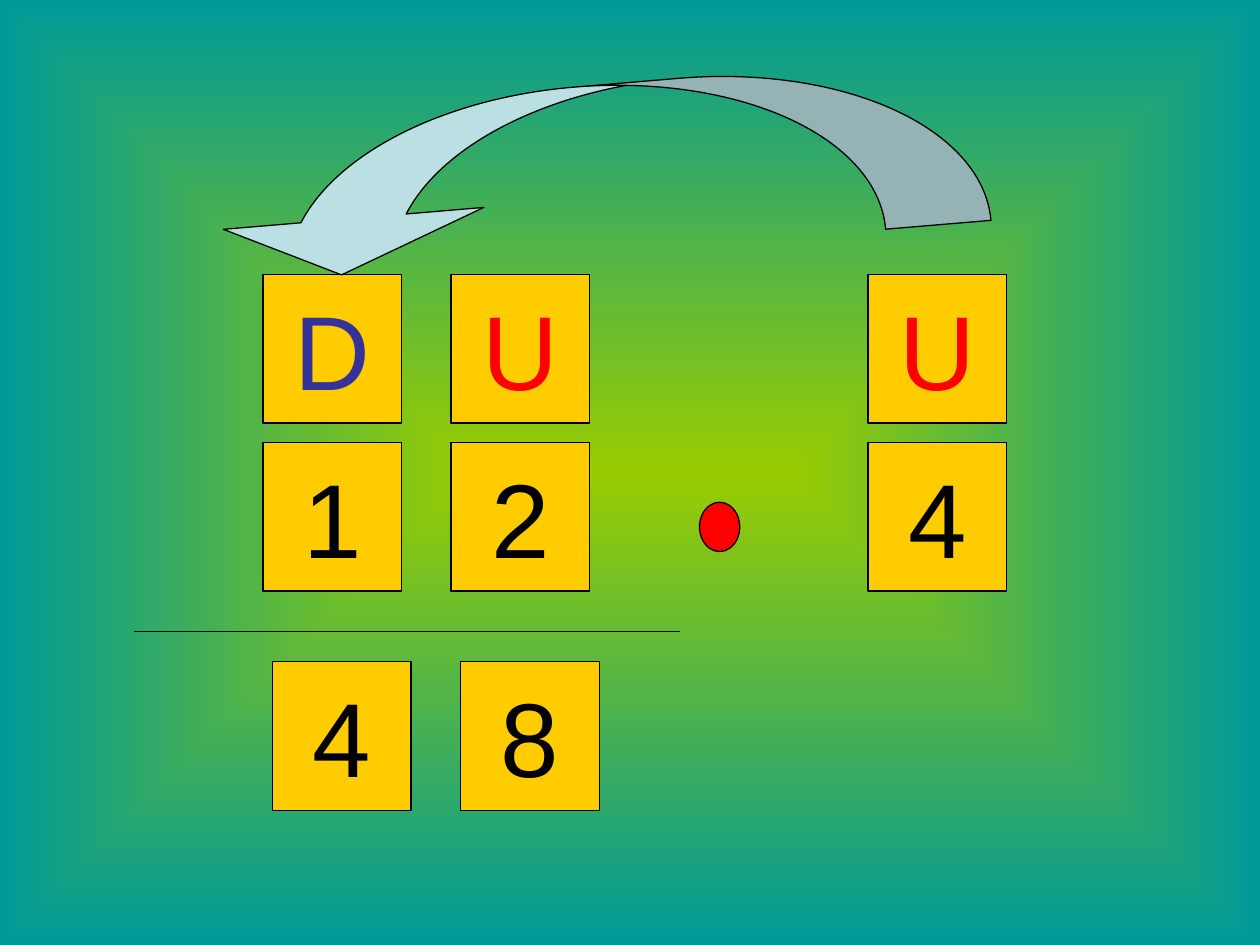
from dataclasses import dataclass

from lxml.etree import SubElement
from pptx import Presentation
from pptx.dml.color import RGBColor
from pptx.enum.shapes import MSO_CONNECTOR, MSO_SHAPE
from pptx.enum.text import MSO_ANCHOR, PP_ALIGN
from pptx.oxml.ns import qn
from pptx.util import Pt

BLACK, RED, BLUE = "000000", "FF0000", "333399"
YELLOW, PALE_BLUE = "FFCC00", "BBE0E3"
LIME, TEAL = "99CC00", "009999"

CARD_W, CARD_H = 79.2, 85
TENS_X, UNITS_X, FACTOR_X = 150.3, 257.8, 496
HEADING_Y, NUMBER_Y, RESULT_Y = 156.8, 252.8, 378
RESULT_SHIFT = 5.5
FONT = {"name": "Arial", "size": Pt(60)}
FRAME = {"word_wrap": False, "vertical_anchor": MSO_ANCHOR.MIDDLE}


@dataclass
class Card:
    text: str
    left: float
    top: float
    color: str = BLACK


CARDS = [
    Card("D", TENS_X, HEADING_Y, BLUE),
    Card("U", UNITS_X, HEADING_Y, RED),
    Card("U", FACTOR_X, HEADING_Y, RED),
    Card("1", TENS_X, NUMBER_Y),
    Card("2", UNITS_X, NUMBER_Y),
    Card("4", FACTOR_X, NUMBER_Y),
    Card("4", TENS_X + RESULT_SHIFT, RESULT_Y),
    Card("8", UNITS_X + RESULT_SHIFT, RESULT_Y),
]


def rgb(color: str) -> RGBColor:
    return RGBColor.from_string(color)


def apply(target, values: dict) -> None:
    for name, value in values.items():
        setattr(target, name, value)


def set_line(sp) -> None:
    sp.line.color.rgb = rgb(BLACK)
    sp.line.width = Pt(0.75)


def add_shape(slide, kind, left: float, top: float, width: float, height: float, fill: str):
    sp = slide.shapes.add_shape(kind, Pt(left), Pt(top), Pt(width), Pt(height))
    sp.shadow.inherit = False
    sp.fill.solid()
    sp.fill.fore_color.rgb = rgb(fill)
    set_line(sp)
    return sp


def add_card(slide, card: Card) -> None:
    sp = add_shape(slide, MSO_SHAPE.RECTANGLE, card.left, card.top, CARD_W, CARD_H, YELLOW)
    tf = sp.text_frame
    apply(tf, FRAME)
    p = tf.paragraphs[0]
    p.alignment = PP_ALIGN.CENTER
    r = p.add_run()
    r.text = card.text
    apply(r.font, FONT)
    r.font.color.rgb = rgb(card.color)


def add_rule(slide, left: float, right: float, y: float) -> None:
    line = slide.shapes.add_connector(MSO_CONNECTOR.STRAIGHT, Pt(left), Pt(y), Pt(right), Pt(y))
    set_line(line)
    SubElement(line._element.spPr, qn("a:effectLst"))


def set_background(slide, center: str, edge: str) -> None:
    """Fill the slide with a gradient that spreads from its centre."""
    fill = slide.background.fill
    fill.gradient()
    for stop, color in zip(fill.gradient_stops, (center, edge)):
        stop.color.rgb = rgb(color)
    grad = slide._element.find(".//" + qn("a:gradFill"))
    grad.remove(grad.find(qn("a:lin")))
    shade = SubElement(grad, qn("a:path"), {"path": "shape"})
    SubElement(shade, qn("a:fillToRect"), {side: "50000" for side in "ltrb"})


def main() -> None:
    prs = Presentation()
    prs.slide_width, prs.slide_height = Pt(720), Pt(540)
    slide = prs.slides.add_slide(prs.slide_layouts[6])
    set_background(slide, LIME, TEAL)

    for card in CARDS:
        add_card(slide, card)
    add_shape(slide, MSO_SHAPE.OVAL, 399.7, 287, 23, 28.2, RED)
    add_rule(slide, 76.5, 388.3, 360.7)

    arrow = add_shape(slide, MSO_SHAPE.CURVED_UP_ARROW, 115.9, 49, 447.1, 95.8, PALE_BLUE)
    arrow.rotation = 175.2
    for i, value in enumerate((0.63, 1.56, 0.33)):
        arrow.adjustments[i] = value

    prs.save("out.pptx")


if __name__ == "__main__":
    main()
